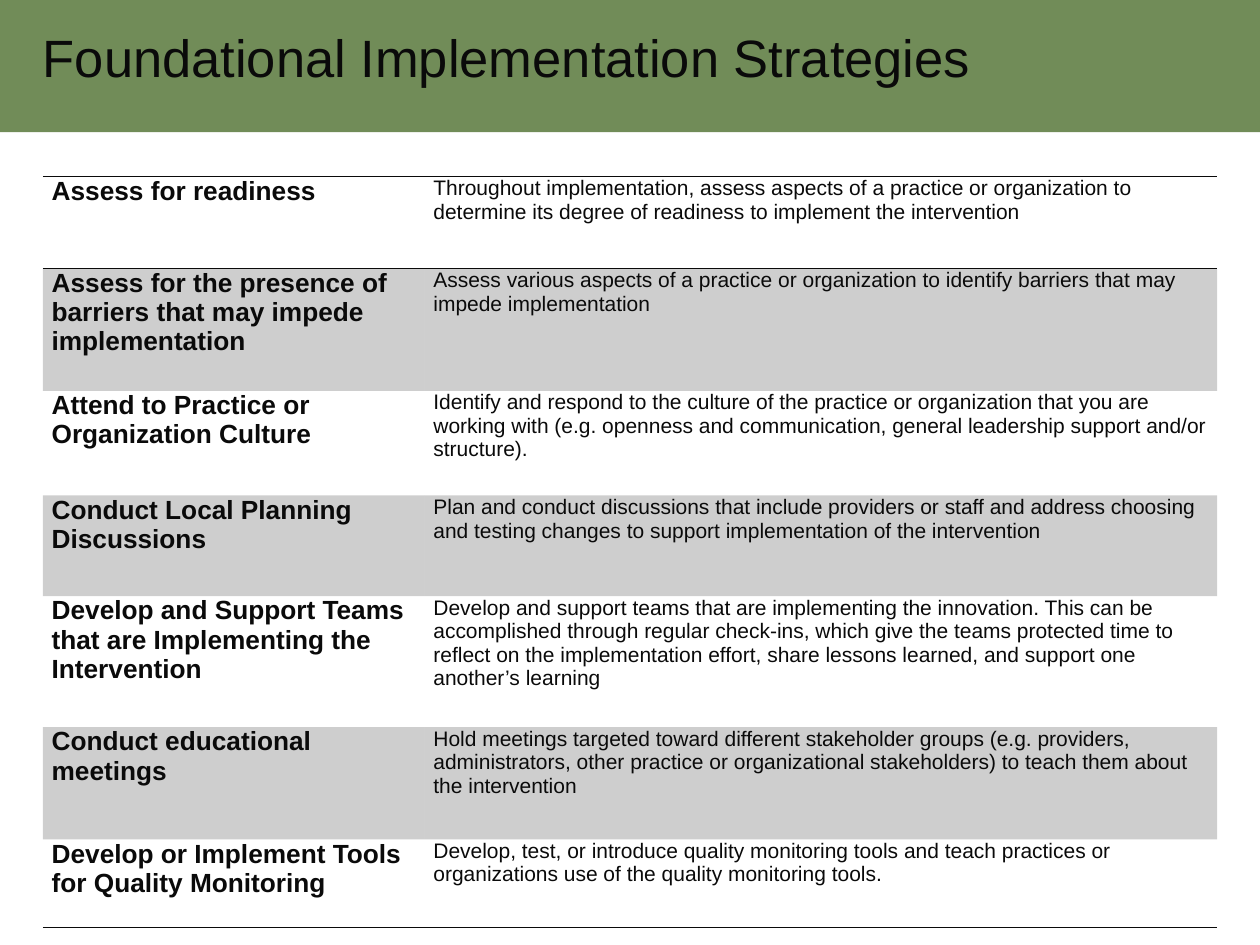
from lxml import etree
from pptx import Presentation
from pptx.dml.color import RGBColor
from pptx.enum.shapes import MSO_SHAPE as Shape
from pptx.enum.text import MSO_ANCHOR as Anchor, PP_ALIGN as Align
from pptx.oxml.ns import qn
from pptx.util import Inches, Pt

INK = RGBColor(0x0A, 0x0A, 0x0A)
GREEN = RGBColor(0x71, 0x8C, 0x58)
WIDTH, HEIGHT = 10, 7.5
LEFT = 0.034

STRATEGIES = [
    (0.73, "Assess for readiness",
     "Throughout implementation, assess aspects of a practice or organization to "
     "determine its degree of readiness to implement the intervention"),
    (0.97, "Assess for the presence of barriers that may impede implementation",
     "Assess various aspects of a practice or organization to identify barriers "
     "that may impede implementation"),
    (0.83, "Attend to Practice or Organization Culture",
     "Identify and respond to the culture of the practice or organization that you "
     "are working with (e.g. openness and communication, general leadership support "
     "and/or structure)."),
    (0.8, "Conduct Local Planning Discussions",
     "Plan and conduct discussions that include providers or staff and address "
     "choosing and testing changes to support implementation of the intervention"),
    (1.04, "Develop and Support Teams that are Implementing the Intervention",
     "Develop and support teams that are implementing the innovation. This can be "
     "accomplished through regular check-ins, which give the teams protected time to "
     "reflect on the implementation effort, share lessons learned, and support one "
     "another’s learning"),
    (0.89, "Conduct educational meetings",
     "Hold meetings targeted toward different stakeholder groups (e.g. providers, "
     "administrators, other practice or organizational stakeholders) to teach them "
     "about the intervention"),
    (0.7, "Develop or Implement Tools for Quality Monitoring",
     "Develop, test, or introduce quality monitoring tools and teach practices or "
     "organizations use of the quality monitoring tools."),
]


class Deck:
    font = "Arial"
    color = INK

    def __init__(self):
        self.prs = Presentation()
        self.prs.slide_width, self.prs.slide_height = Inches(WIDTH), Inches(HEIGHT)
        self.s = self.prs.slides.add_slide(self.prs.slide_layouts[5])

    def box(self, x, y, w, h):
        return [Inches(WIDTH * x), Inches(HEIGHT * y), Inches(WIDTH * w), Inches(HEIGHT * h)]

    def label(self, tf, text, size, bold=False):
        tf.text = text
        p = tf.paragraphs[0]
        p.alignment = Align.LEFT
        f = p.runs[0].font
        f.name, f.size, f.bold = self.font, Pt(size), bold
        f.color.rgb = self.color

    def band(self, x, y, w, h, color):
        sp = self.s.shapes.add_shape(Shape.RECTANGLE, *self.box(x, y, w, h))
        sp.shadow.inherit = False
        sp.fill.solid()
        sp.fill.fore_color.rgb = color
        sp.line.fill.background()
        self.s.shapes._spTree.insert(2, sp._element)

    def title(self, x, y, w, h, text, size):
        sp = self.s.shapes.title
        sp.left, sp.top, sp.width, sp.height = self.box(x, y, w, h)
        tf = sp.text_frame
        tf.word_wrap, tf.vertical_anchor = True, Anchor.TOP
        tf.margin_left = tf.margin_right = 0
        self.label(tf, text, size)

    def borders(self, cell, ruled):
        tcPr = cell._tc.get_or_add_tcPr()
        for side in ("lnL", "lnR", "lnT", "lnB"):
            ln = etree.SubElement(tcPr, qn(f"a:{side}"), w=str(Pt(1)))
            if side in ruled:
                fill = etree.SubElement(ln, qn("a:solidFill"))
                etree.SubElement(fill, qn("a:srgbClr"), val=str(self.color))
            else:
                etree.SubElement(ln, qn("a:noFill"))

    def shade(self, cell, opacity):
        if not opacity:
            cell.fill.background()
            return
        cell.fill.solid()
        cell.fill.fore_color.rgb = self.color
        clr = cell._tc.tcPr.find(qn("a:solidFill"))[0]
        etree.SubElement(clr, qn("a:alpha"), val=str(opacity * 1000))

    def table(self, x, y, widths, rows):
        height = sum(r[0] for r in rows) / HEIGHT
        shape = self.s.shapes.add_table(
            len(rows), len(widths), *self.box(x, y, sum(widths), height))
        tbl = shape.table
        tbl.first_row = tbl.horz_banding = False
        for col, w in zip(tbl.columns, widths):
            col.width = Inches(WIDTH * w)
        rules = {0: ("lnT", "lnB"), 1: ("lnT",), len(rows) - 1: ("lnB",)}
        for i, (h, *texts) in enumerate(rows):
            tbl.rows[i].height = Inches(h)
            for j, text in enumerate(texts):
                cell = tbl.cell(i, j)
                cell.margin_left = cell.margin_right = Inches(0.07)
                cell.margin_top = cell.margin_bottom = 0
                self.borders(cell, rules.get(i, ()))
                self.shade(cell, 20 if i % 2 else 0)
                self.label(cell.text_frame, text, 12 if j else 15, bold=j == 0)


def main():
    deck = Deck()
    deck.band(0, -0.005, 1, 0.145, GREEN)
    deck.title(LEFT, 0.02, 0.92, 0.137, "Foundational Implementation Strategies", 30)
    deck.table(LEFT, 0.187, (0.303, 0.629), STRATEGIES)
    deck.prs.save("out.pptx")


if __name__ == "__main__":
    main()
